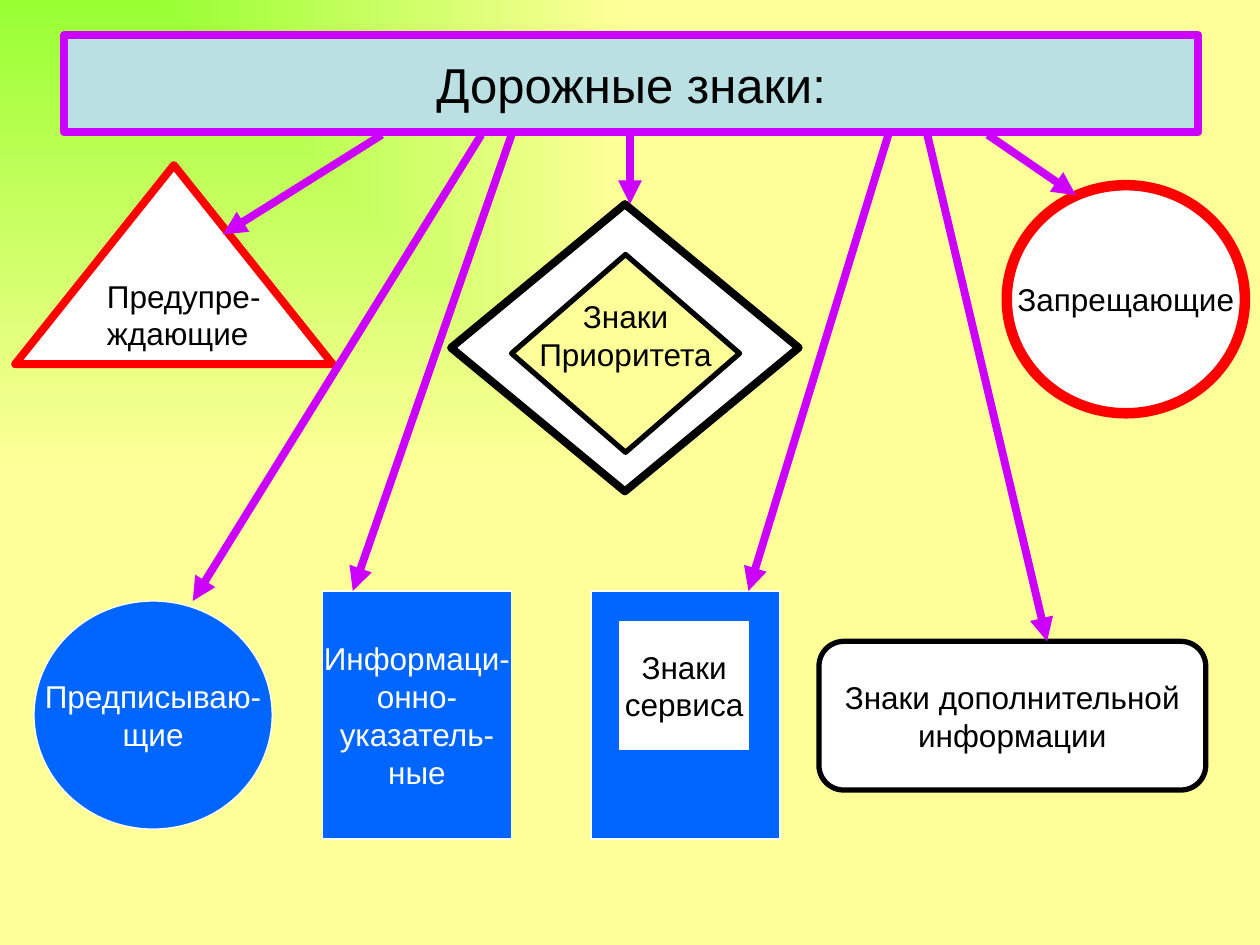
from dataclasses import dataclass
from typing import NamedTuple, Optional

from lxml import etree
from pptx import Presentation
from pptx.dml.color import RGBColor
from pptx.enum.shapes import MSO_CONNECTOR, MSO_SHAPE
from pptx.enum.text import MSO_ANCHOR, PP_ALIGN
from pptx.oxml.ns import qn
from pptx.util import Inches, Length, Pt

RECTANGLE = MSO_SHAPE.RECTANGLE
TRIANGLE = MSO_SHAPE.ISOSCELES_TRIANGLE
DIAMOND = MSO_SHAPE.DIAMOND
DISC = MSO_SHAPE.FLOWCHART_CONNECTOR
ROUNDED = MSO_SHAPE.ROUNDED_RECTANGLE
STRAIGHT = MSO_CONNECTOR.STRAIGHT
LEFT, CENTER = PP_ALIGN.LEFT, PP_ALIGN.CENTER
MIDDLE = MSO_ANCHOR.MIDDLE

COLUMNS, ROWS = 100, 75  # the slide as a grid of square cells
CELL = Inches(0.1)


@dataclass(frozen=True)
class Theme:
    font: str = "Arial"
    title_size: float = 28
    label_size: float = 18
    green: str = "99FF33"
    yellow: str = "FFFF99"
    header: str = "BBE0E3"
    purple: str = "CC00FF"
    red: str = "FF0000"
    blue: str = "0066FF"
    white: str = "FFFFFF"
    black: str = "000000"
    hairline: float = 0.75
    medium: float = 3
    thick: float = 4.5
    heavy: float = 6


THEME = Theme()


class Box(NamedTuple):
    column: float
    row: float
    width: float
    height: float


class Arrow(NamedTuple):
    start_column: float
    end_column: float
    end_row: float


@dataclass(frozen=True)
class Sign:
    kind: int
    box: Box
    fill: str
    border: str
    border_width: float
    text: str = ""
    text_color: str = THEME.black
    text_size: float = THEME.label_size
    align: int = CENTER
    lift: float = 0  # rows kept free below the text
    inner: Optional["Sign"] = None


DISC_SIZE = (18.9, 18.1)
PANEL_SIZE = (15, 19.7)
PANEL_ROW = 46.9
ARROW_START_ROW = 10.7

SIGNS = [
    Sign(RECTANGLE, Box(5.1, 2.8, 90, 7.7), THEME.header, THEME.purple, THEME.thick,
         "Дорожные знаки:", text_size=THEME.title_size),
    Sign(TRIANGLE, Box(1.2, 13.1, 25.2, 15.8), THEME.white, THEME.red, THEME.thick,
         "Предупре-\nждающие", align=LEFT),
    Sign(DIAMOND, Box(35.8, 16.2, 27.6, 22.8), THEME.white, THEME.black, THEME.thick,
         inner=Sign(DIAMOND, Box(40.6, 20.2, 18.1, 15.7), THEME.yellow, THEME.black,
                    THEME.medium, "Знаки\nПриоритета", lift=2.9)),
    Sign(DISC, Box(79.9, 14.7, *DISC_SIZE), THEME.white, THEME.red, THEME.heavy,
         "Запрещающие"),
    Sign(DISC, Box(2.7, 47.7, *DISC_SIZE), THEME.blue, THEME.white, THEME.hairline,
         "Предписываю-\nщие", THEME.white),
    Sign(RECTANGLE, Box(25.6, PANEL_ROW, *PANEL_SIZE), THEME.blue, THEME.white,
         THEME.hairline, "Информаци-\nонно-\nуказатель-\nные", THEME.white),
    Sign(RECTANGLE, Box(46.9, PANEL_ROW, *PANEL_SIZE), THEME.blue, THEME.white,
         THEME.hairline,
         inner=Sign(RECTANGLE, Box(49.2, 49.3, 10.2, 10.2), THEME.white, THEME.white,
                    THEME.hairline, "Знаки\nсервиса")),
    Sign(ROUNDED, Box(65, 50.9, 30.7, 11.8), THEME.white, THEME.black, THEME.medium,
         "Знаки дополнительной\nинформации"),
]

ARROWS = [
    Arrow(30.3, 17.7, 18.6),
    Arrow(50, 50, 16.2),
    Arrow(38.2, 15.3, 47.7),
    Arrow(40.6, 28, PANEL_ROW),
    Arrow(70.5, 59.4, PANEL_ROW),
    Arrow(73.6, 83.1, 50.9),
    Arrow(78.4, 85.4, 15.5),
]


def cells(count: float) -> Length:
    return Length(round(count * CELL))


def rgb(color: str) -> RGBColor:
    return RGBColor.from_string(color)


def paint_background(slide) -> None:
    """Spread a rectangular gradient from the top left corner."""
    fill = slide.background.fill
    fill.gradient()
    for stop, color in zip(fill.gradient_stops, (THEME.green, THEME.yellow)):
        stop.color.rgb = rgb(color)
    linear = slide.element.find(".//" + qn("a:lin"))
    corner = etree.Element(qn("a:path"), {"path": "rect"})
    etree.SubElement(corner, qn("a:fillToRect"), {"r": "100000", "b": "100000"})
    linear.getparent().replace(linear, corner)


def write_label(shape, sign: Sign) -> None:
    frame = shape.text_frame
    frame.text = sign.text
    frame.word_wrap = False
    frame.vertical_anchor = MIDDLE
    if sign.lift:
        frame.margin_top, frame.margin_bottom = 0, cells(sign.lift)
    for paragraph in frame.paragraphs:
        paragraph.alignment = sign.align
        for run in paragraph.runs:
            run.font.name = THEME.font
            run.font.size = Pt(sign.text_size)
            run.font.color.rgb = rgb(sign.text_color)


def draw_sign(shapes, sign: Sign) -> None:
    """Draw a sign, grouped with its inner sign if it has one."""
    if sign.inner:
        shapes = shapes.add_group_shape().shapes
    shape = shapes.add_shape(sign.kind, *map(cells, sign.box))
    shape.shadow.inherit = False
    shape.fill.solid()
    shape.fill.fore_color.rgb = rgb(sign.fill)
    shape.line.color.rgb = rgb(sign.border)
    shape.line.width = Pt(sign.border_width)
    if sign.text:
        write_label(shape, sign)
    if sign.inner:
        draw_sign(shapes, sign.inner)


def draw_arrow(shapes, arrow: Arrow) -> None:
    connector = shapes.add_connector(
        STRAIGHT, cells(arrow.start_column), cells(ARROW_START_ROW),
        cells(arrow.end_column), cells(arrow.end_row))
    connector.line.color.rgb = rgb(THEME.purple)
    connector.line.width = Pt(THEME.thick)
    properties = connector.element.spPr
    etree.SubElement(properties.find(qn("a:ln")), qn("a:tailEnd"), {"type": "triangle"})
    etree.SubElement(properties, qn("a:effectLst"))


def main() -> None:
    presentation = Presentation()
    presentation.slide_width = cells(COLUMNS)
    presentation.slide_height = cells(ROWS)
    slide = presentation.slides.add_slide(presentation.slide_layouts[6])
    paint_background(slide)
    for sign in SIGNS:
        draw_sign(slide.shapes, sign)
    for arrow in ARROWS:
        draw_arrow(slide.shapes, arrow)
    presentation.save("out.pptx")


if __name__ == "__main__":
    main()
